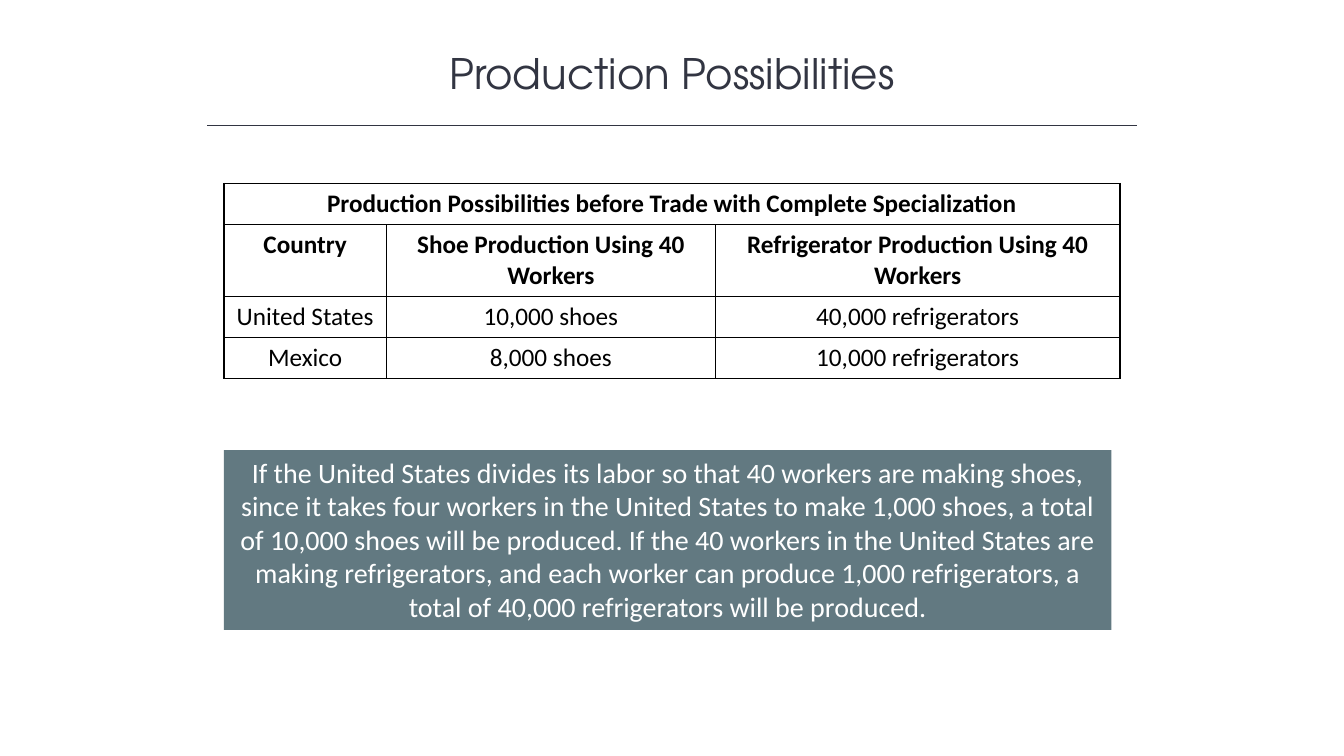
from lxml import etree
from pptx import Presentation
from pptx.dml.color import RGBColor
from pptx.enum import shapes, text
from pptx.oxml.ns import qn
from pptx.util import Pt

# Content
TITLE = "Production Possibilities"
CAPTION = "Production Possibilities before Trade with Complete Specialization"
ROWS = [
    (CAPTION, "", ""),
    ("Country", "Shoe Production Using 40 Workers",
     "Refrigerator Production Using 40 Workers"),
    ("United States", "10,000 shoes", "40,000 refrigerators"),
    ("Mexico", "8,000 shoes", "10,000 refrigerators"),
]
NOTE = (
    "If the United States divides its labor so that 40 workers are making shoes, "
    "since it takes four workers in the United States to make 1,000 shoes, a total "
    "of 10,000 shoes will be produced. If the 40 workers in the United States are "
    "making refrigerators, and each worker can produce 1,000 refrigerators, a total "
    "of 40,000 refrigerators will be produced."
)

# Layout in points
LEFT = 160
COL_WIDTHS = [116, 235, 289]
ROW_HEIGHTS = [29.5, 50.5, 29.5, 29.5]
INK, BLACK, WHITE, TEAL = "323542", "000000", "FFFFFF", "627981"


def color(value):
    return RGBColor.from_string(value)


def box(left, top, width, height):
    return [Pt(v) for v in (left, top, width, height)]


def write(tf, content, size, font, ink, bold=False):
    tf.word_wrap = True
    p = tf.paragraphs[0]
    p.text = content
    p.alignment = text.PP_ALIGN.CENTER
    p.font.size, p.font.name, p.font.bold = Pt(size), font, bold
    p.font.color.rgb = color(ink)


def add_borders(cell):
    tcPr = cell._tc.get_or_add_tcPr()
    for i, side in enumerate(("lnL", "lnR", "lnT", "lnB")):
        ln = etree.Element(qn(f"a:{side}"), w=str(Pt(1)))
        fill = etree.SubElement(ln, qn("a:solidFill"))
        etree.SubElement(fill, qn("a:srgbClr"), val=BLACK)
        tcPr.insert(i, ln)


prs = Presentation()
prs.slide_width, prs.slide_height = Pt(960), Pt(540)
slide = prs.slides.add_slide(prs.slide_layouts[5])

# Title and rule
title = slide.shapes.title
title.left, title.top, title.width, title.height = box(120, 30, 720, 44)
title.text_frame.vertical_anchor = text.MSO_ANCHOR.TOP
write(title.text_frame, TITLE, 30, "TeX Gyre Adventor", INK)

rule = slide.shapes.add_connector(
    shapes.MSO_CONNECTOR.STRAIGHT, Pt(148), Pt(89.5), Pt(812), Pt(89.5))
rule.line.color.rgb = color(INK)
rule.line.width = Pt(1)
etree.SubElement(rule._element.spPr, qn("a:effectLst"))

# Table
table = slide.shapes.add_table(
    len(ROWS), len(COL_WIDTHS),
    *box(LEFT, 131, sum(COL_WIDTHS), sum(ROW_HEIGHTS))).table
table.first_row = table.horz_banding = False
for col, width in zip(table.columns, COL_WIDTHS):
    col.width = Pt(width)
for row, height in zip(table.rows, ROW_HEIGHTS):
    row.height = Pt(height)
table.cell(0, 0).merge(table.cell(0, 2))
for i, values in enumerate(ROWS):
    for j, value in enumerate(values):
        cell = table.cell(i, j)
        cell.fill.background()
        add_borders(cell)
        if cell.is_spanned:
            continue
        cell.vertical_anchor = text.MSO_ANCHOR.MIDDLE
        write(cell.text_frame, value, 18, "Calibri", BLACK, bold=i < 2)
table.cell(1, 0).vertical_anchor = text.MSO_ANCHOR.TOP

# Explanation panel
sp = slide.shapes.add_shape(shapes.MSO_SHAPE.RECTANGLE, *box(LEFT, 321.5, 634, 128.5))
sp.shadow.inherit = False
sp.fill.solid()
sp.fill.fore_color.rgb = color(TEAL)
sp.line.fill.background()
sp.text_frame.vertical_anchor = text.MSO_ANCHOR.TOP
write(sp.text_frame, NOTE, 20, "Calibri", WHITE)

prs.save("out.pptx")
